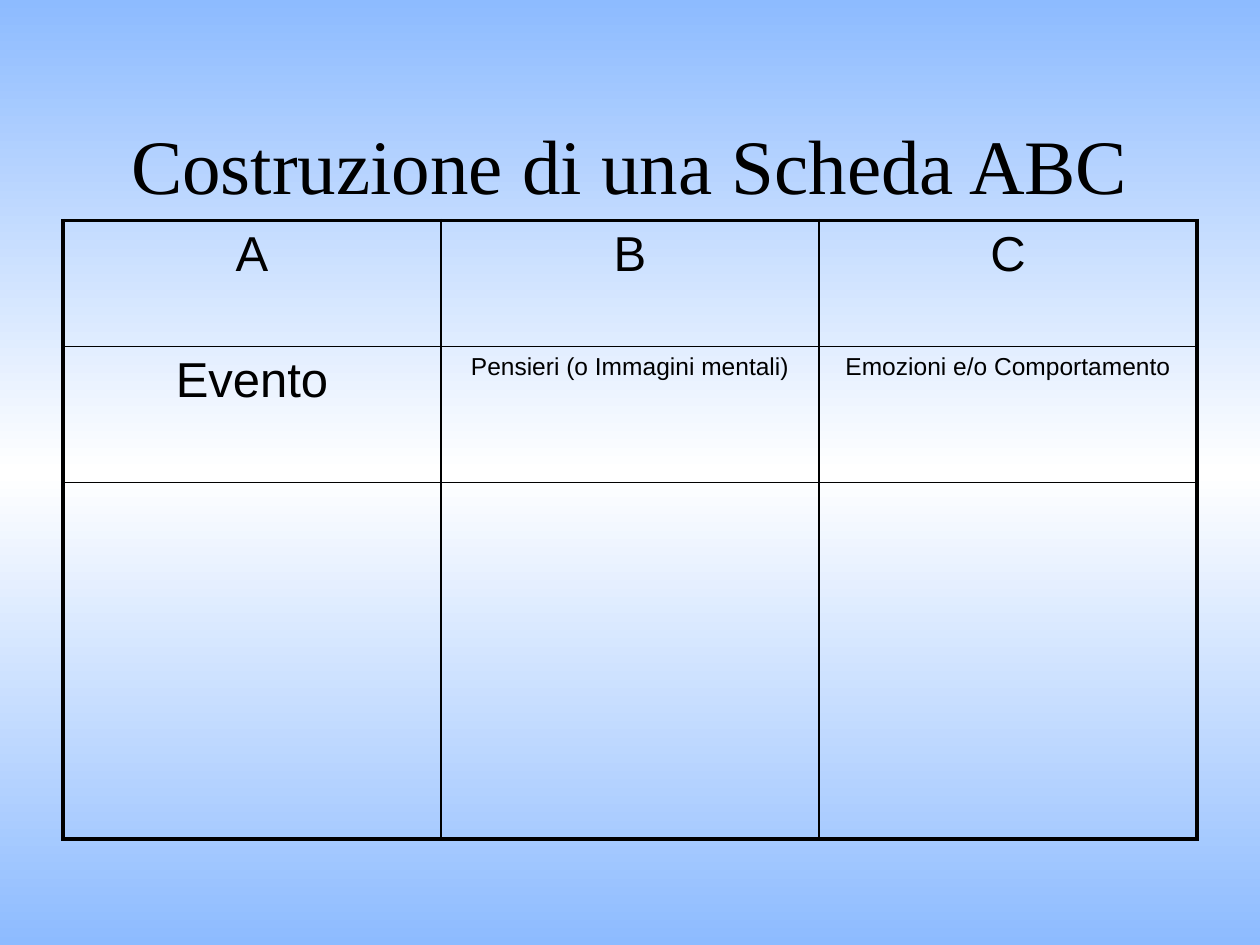
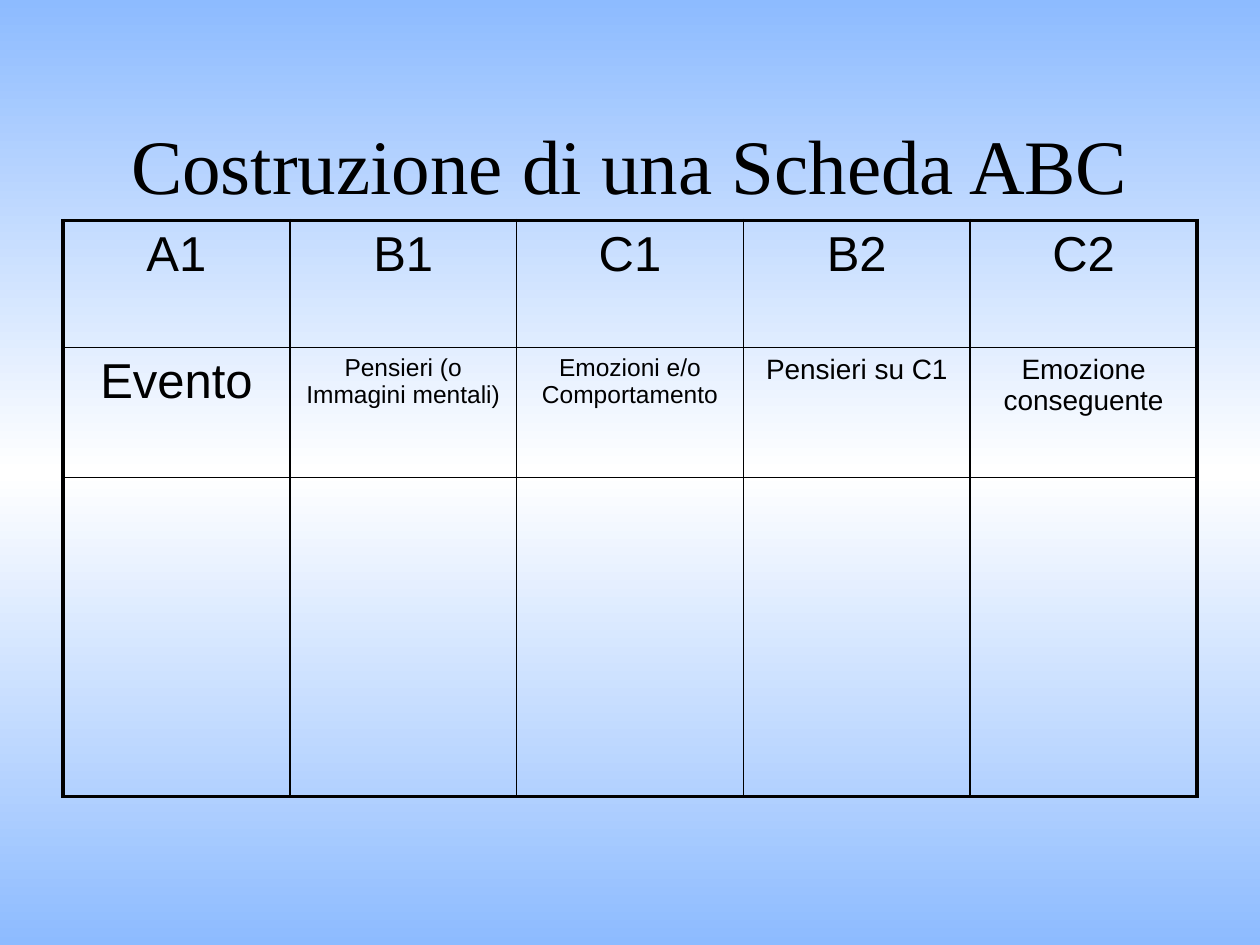
from lxml.etree import SubElement
from pptx import Presentation
from pptx.dml.color import RGBColor
from pptx.enum.text import MSO_ANCHOR, PP_ALIGN
from pptx.oxml.ns import qn
from pptx.util import Inches, Pt

COLORS = {"ink": "000000", "edge": "8DBBFF", "middle": "FFFFFF"}
TITLE = "Costruzione di una Scheda ABC"
THICK, THIN = 2.25, 1


class SlideBuilder:
    title_font = "Times New Roman"
    table_font = "Arial"

    def __init__(self, presentation):
        self.presentation = presentation
        self.slide = None

    def add_slide(self):
        self.slide = self.presentation.slides.add_slide(self.presentation.slide_layouts[6])
        fill = self.slide.background.fill
        fill.gradient()
        fill.gradient_angle = 90
        stops = self.slide.element.find(".//" + qn("a:gsLst"))
        for stop in list(stops):
            stops.remove(stop)
        for percent, color in ((0, "edge"), (50, "middle"), (100, "edge")):
            stop = SubElement(stops, qn("a:gs"), pos=str(percent * 1000))
            SubElement(stop, qn("a:srgbClr"), val=COLORS[color])

    def format_paragraph(self, paragraph, font, size):
        paragraph.alignment = PP_ALIGN.CENTER
        for run in paragraph.runs:
            run.font.name = font
            run.font.size = Pt(size)
            run.font.color.rgb = RGBColor.from_string(COLORS["ink"])

    def add_title(self, text):
        shape = self.slide.shapes.add_textbox(Inches(0.75), Inches(0.67), Inches(8.5), Inches(1.25))
        text_frame = shape.text_frame
        text_frame.word_wrap = True
        text_frame.vertical_anchor = MSO_ANCHOR.MIDDLE
        text_frame.text = text
        self.format_paragraph(text_frame.paragraphs[0], self.title_font, 44)

    def add_borders(self, cell, widths):
        properties = cell._tc.get_or_add_tcPr()
        for side, width in widths.items():
            line = SubElement(properties, qn("a:ln" + side), w=str(Pt(width)))
            fill = SubElement(line, qn("a:solidFill"))
            SubElement(fill, qn("a:srgbClr"), val=COLORS["ink"])

    def add_cell_text(self, cell, text, size):
        cell.text = text
        paragraph = cell.text_frame.paragraphs[0]
        self.format_paragraph(paragraph, self.table_font, size)
        spacing = SubElement(paragraph._p.get_or_add_pPr(), qn("a:spcBef"))
        SubElement(spacing, qn("a:spcPct"), val="20000")

    def add_table(self, columns, row_heights):
        row_count, column_count = len(row_heights), len(columns)
        width = 9
        frame = self.slide.shapes.add_table(
            row_count, column_count, Inches(0.5), Inches(1.75), Inches(width), Inches(sum(row_heights)))
        table = frame.table
        table.first_row = False
        table.horz_banding = False
        for column in table.columns:
            column.width = Inches(width / column_count)
        for row, height in enumerate(row_heights):
            table.rows[row].height = Inches(height)
            for column, (letter, meaning, size) in enumerate(columns):
                cell = table.cell(row, column)
                self.add_borders(cell, {
                    "L": THICK if column == 0 else THIN,
                    "R": THICK if column == column_count - 1 else THIN,
                    "T": THICK if row == 0 else THIN,
                    "B": THICK if row == row_count - 1 else THIN,
                })
                cell.fill.background()
                if row == 0:
                    self.add_cell_text(cell, letter, 28)
                elif row == 1:
                    self.add_cell_text(cell, meaning, size)


def main():
    presentation = Presentation()
    presentation.slide_width = Inches(10)
    presentation.slide_height = Inches(7.5)
    builder = SlideBuilder(presentation)

    meanings = [("Evento", 28), ("Pensieri (o Immagini mentali)", 14), ("Emozioni e/o Comportamento", 14)]
    simple_columns = [(letter, *meaning) for letter, meaning in zip("ABC", meanings)]
    extended_columns = [(letter + "1", text, size) for letter, text, size in simple_columns]
    extended_columns += [("B2", "Pensieri su C1", 16), ("C2", "Emozione conseguente", 16)]

    for columns, row_heights in (
        (simple_columns, (1, 1.08, 2.83)),
        (extended_columns, (1.01, 1.03, 2.53)),
    ):
        builder.add_slide()
        builder.add_title(TITLE)
        builder.add_table(columns, row_heights)

    presentation.save("out.pptx")


if __name__ == "__main__":
    main()
